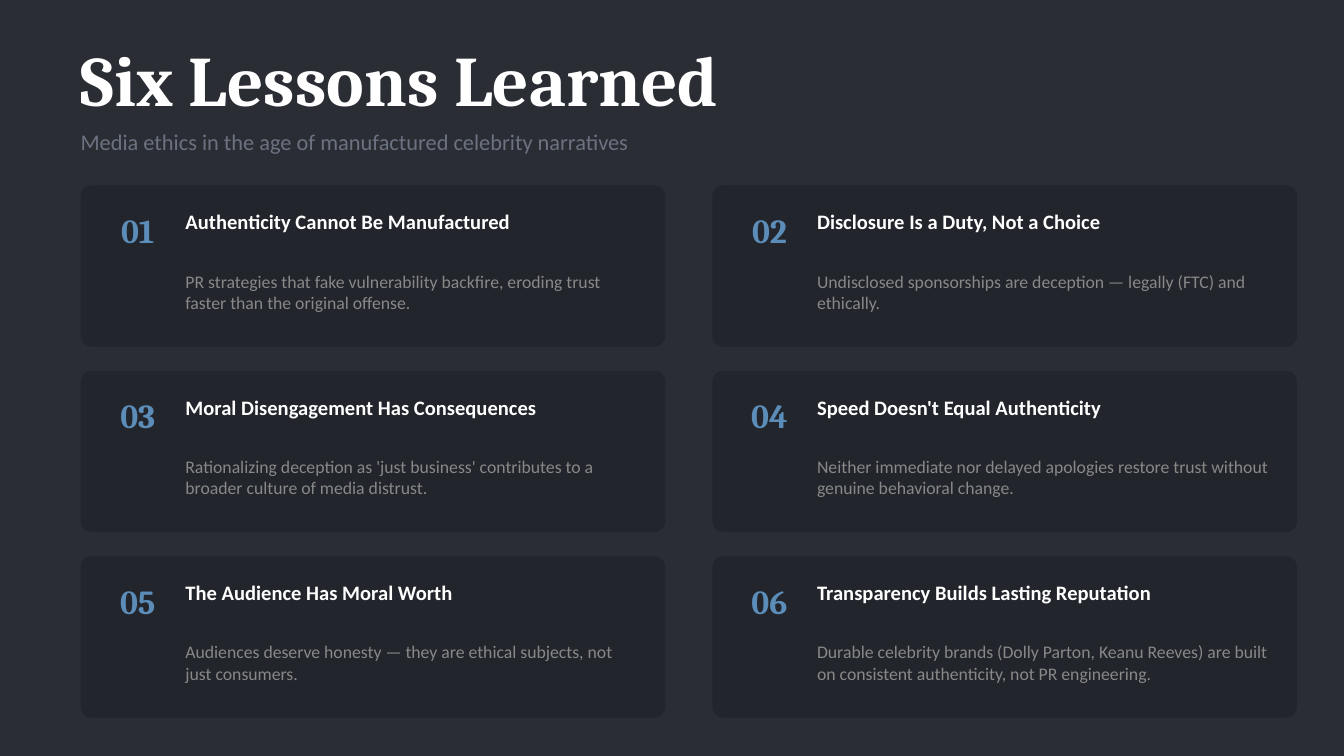
from dataclasses import dataclass

from pptx import Presentation
from pptx.dml.color import RGBColor
from pptx.enum import shapes, text
from pptx.util import Pt


@dataclass(frozen=True)
class Theme:
    background: str = "2B2D35"
    card: str = "22252C"
    # Text styles: font, size, colour, bold
    title: tuple = ("Cambria", 38, "FFFFFF", True)
    subtitle: tuple = ("Calibri", 12, "6B7280", False)
    number: tuple = ("Cambria", 18, "5B8DB8", True)
    heading: tuple = ("Calibri", 11, "FFFFFF", True)
    body: tuple = ("Calibri", 9.5, "888888", False)


theme = Theme()

LESSONS = [
    ("Authenticity Cannot Be Manufactured",
     "PR strategies that fake vulnerability backfire, eroding trust faster than the original offense."),
    ("Disclosure Is a Duty, Not a Choice",
     "Undisclosed sponsorships are deception — legally (FTC) and ethically."),
    ("Moral Disengagement Has Consequences",
     "Rationalizing deception as 'just business' contributes to a broader culture of media distrust."),
    ("Speed Doesn't Equal Authenticity",
     "Neither immediate nor delayed apologies restore trust without genuine behavioral change."),
    ("The Audience Has Moral Worth",
     "Audiences deserve honesty — they are ethical subjects, not just consumers."),
    ("Transparency Builds Lasting Reputation",
     "Durable celebrity brands (Dolly Parton, Keanu Reeves) are built on consistent authenticity, "
     "not PR engineering."),
]

LEFT, TOP = 43.2, 99.36
CARD_W, CARD_H = 313.2, 86.4
COLUMN_STEP, ROW_STEP = 338.4, 99.36


def write(sp, words, style, align=text.PP_ALIGN.LEFT):
    """Fill a shape with one vertically centred paragraph, without margins."""
    tf = sp.text_frame
    tf.text = words
    tf.word_wrap = True
    tf.auto_size = text.MSO_AUTO_SIZE.NONE
    tf.vertical_anchor = text.MSO_ANCHOR.MIDDLE
    tf.margin_left = tf.margin_top = tf.margin_right = tf.margin_bottom = 0
    p = tf.paragraphs[0]
    p.alignment = align
    p.space_before = Pt(0)
    font = p.runs[0].font
    font.name, size, color, font.bold = style
    font.size = Pt(size)
    font.color.rgb = RGBColor.from_string(color)


prs = Presentation()
prs.slide_width, prs.slide_height = Pt(720), Pt(405)
s = prs.slides.add_slide(prs.slide_layouts[0])
s.background.fill.solid()
s.background.fill.fore_color.rgb = RGBColor.from_string(theme.background)

# Title and subtitle
for sp, top, height, words, style in [
    (s.shapes.title, 20.16, 43.2, "Six Lessons Learned", theme.title),
    (s.placeholders[1], 64.8, 21.6,
     "Media ethics in the age of manufactured celebrity narratives", theme.subtitle),
]:
    sp.left, sp.top, sp.width, sp.height = Pt(LEFT), Pt(top), Pt(633.6), Pt(height)
    write(sp, words, style)

# Lesson cards, two to a row
for i, (heading, body) in enumerate(LESSONS):
    row, column = divmod(i, 2)
    x, y = LEFT + column * COLUMN_STEP, TOP + row * ROW_STEP

    card = s.shapes.add_shape(shapes.MSO_SHAPE.ROUNDED_RECTANGLE,
                              Pt(x), Pt(y), Pt(CARD_W), Pt(CARD_H))
    card.adjustments[0] = 0.067
    card.shadow.inherit = False
    card.fill.solid()
    card.fill.fore_color.rgb = RGBColor.from_string(theme.card)
    card.line.fill.background()

    for dx, dy, width, height, words, style, align in [
        (10.8, 5.76, 39.6, 36, f"{i + 1:02}", theme.number, text.PP_ALIGN.CENTER),
        (56.16, 7.2, 244.8, 24.48, heading, theme.heading, text.PP_ALIGN.LEFT),
        (56.16, 33.12, 244.8, 47.52, body, theme.body, text.PP_ALIGN.LEFT),
    ]:
        box = s.shapes.add_textbox(Pt(x + dx), Pt(y + dy), Pt(width), Pt(height))
        write(box, words, style, align)

prs.save("out.pptx")
